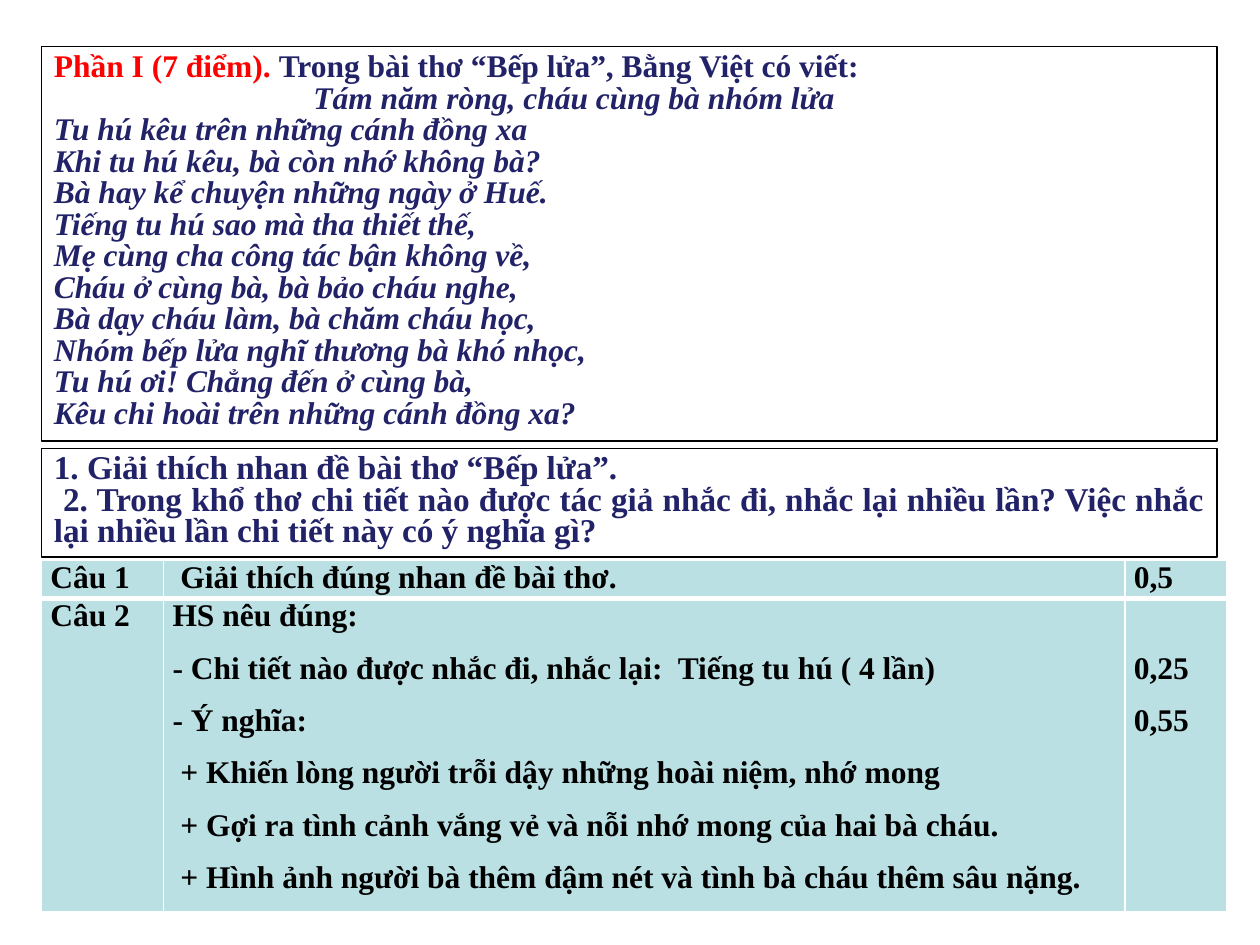
from lxml.etree import SubElement
from pptx import Presentation
from pptx.dml.color import RGBColor
from pptx.enum.text import MSO_AUTO_SIZE as AutoSize, PP_ALIGN as Align
from pptx.oxml.ns import qn
from pptx.util import Inches, Pt

NAVY = RGBColor(0x22, 0x22, 0x68)
RED = RGBColor(0xFF, 0, 0)
BLACK = RGBColor(0, 0, 0)
WHITE = RGBColor(0xFF, 0xFF, 0xFF)
PALE_TEAL = RGBColor(0xBB, 0xE0, 0xE3)

POEM = [
    "Tám năm ròng, cháu cùng bà nhóm lửa",
    "Tu hú kêu trên những cánh đồng xa",
    "Khi tu hú kêu, bà còn nhớ không bà?",
    "Bà hay kể chuyện những ngày ở Huế.",
    "Tiếng tu hú sao mà tha thiết thế,",
    "Mẹ cùng cha công tác bận không về,",
    "Cháu ở cùng bà, bà bảo cháu nghe,",
    "Bà dạy cháu làm, bà chăm cháu học,",
    "Nhóm bếp lửa nghĩ thương bà khó nhọc,",
    "Tu hú ơi! Chẳng đến ở cùng bà,",
    "Kêu chi hoài trên những cánh đồng xa?",
]
QUESTIONS = [
    "1. Giải thích nhan đề bài thơ “Bếp lửa”.",
    " 2. Trong khổ thơ chi tiết nào được tác giả nhắc đi, nhắc lại nhiều lần? "
    "Việc nhắc lại nhiều lần chi tiết này có ý nghĩa gì?",
]
ANSWERS = [
    [["Câu 1"], [" Giải thích đúng nhan đề bài thơ."], ["0,5"]],
    [
        ["Câu 2"],
        [
            "HS nêu đúng:",
            "- Chi tiết nào được nhắc đi, nhắc lại:  Tiếng tu hú ( 4 lần)",
            "- Ý nghĩa:",
            " + Khiến lòng người trỗi dậy những hoài niệm, nhớ mong",
            " + Gợi ra tình cảnh vắng vẻ và nỗi nhớ mong của hai bà cháu.",
            " + Hình ảnh người bà thêm đậm nét và tình bà cháu thêm sâu nặng.",
        ],
        ["0,25", "0,55"],
    ],
]
COLUMN_WIDTHS = [0.97, 7.63, 0.81]
ROW_HEIGHTS = [0.3, 2.49]
SKIPPED_LINE = Inches(0.42)


def apply(target, **values):
    for name, value in values.items():
        setattr(target, name, value)


def add_run(paragraph, text, color, size=18, italic=False):
    run = paragraph.add_run()
    run.text = text
    apply(run.font, name="Times New Roman", size=Pt(size), bold=True, italic=italic)
    run.font.color.rgb = color


def add_paragraph(frame, **values):
    first = frame.paragraphs[0]
    paragraph = frame.add_paragraph() if first.runs else first
    apply(paragraph, **values)
    return paragraph


def add_framed_box(slide, box):
    shape = slide.shapes.add_textbox(*box)
    shape.fill.solid()
    shape.fill.fore_color.rgb = WHITE
    shape.line.color.rgb = BLACK
    shape.line.width = Pt(1)
    apply(shape.text_frame, word_wrap=True, auto_size=AutoSize.SHAPE_TO_FIT_TEXT)
    return shape.text_frame


def add_poem(slide, box):
    frame = add_framed_box(slide, box)
    heading = add_paragraph(frame, alignment=Align.JUSTIFY, line_spacing=Pt(18))
    add_run(heading, "Phần I (7 điểm). ", RED)
    add_run(heading, "Trong bài thơ “Bếp lửa”, Bằng Việt có viết:", NAVY)
    verse = add_paragraph(frame, alignment=Align.LEFT, line_spacing=Pt(18))
    verse._p.get_or_add_pPr().set("indent", str(Inches(2.06)))
    for index, line in enumerate(POEM):
        if index:
            verse.add_line_break()
        add_run(verse, line, NAVY, italic=True)


def add_questions(slide, box):
    frame = add_framed_box(slide, box)
    for question in QUESTIONS:
        paragraph = add_paragraph(frame, alignment=Align.JUSTIFY, line_spacing=Pt(18))
        add_run(paragraph, question, NAVY, size=19)


def set_borders(cell, widths):
    properties = cell._tc.get_or_add_tcPr()
    for position, (side, width) in enumerate(widths.items()):
        line = SubElement(properties, qn(f"a:ln{side}"), w=str(Pt(width)))
        properties.remove(line)
        properties.insert(position, line)
        fill = SubElement(line, qn("a:solidFill"))
        SubElement(fill, qn("a:srgbClr"), val=str(WHITE))


def fill_cell(cell, lines, alignment):
    apply(cell, margin_left=Inches(0.07), margin_right=Inches(0.07),
          margin_top=0, margin_bottom=0)
    cell.fill.solid()
    cell.fill.fore_color.rgb = PALE_TEAL
    for line in lines:
        paragraph = add_paragraph(cell.text_frame, alignment=alignment, space_after=Pt(10))
        add_run(paragraph, line, BLACK)


def add_answers(slide, box):
    table = slide.shapes.add_table(len(ROW_HEIGHTS), len(COLUMN_WIDTHS), *box).table
    apply(table, first_row=False, horz_banding=False)
    for column, width in zip(table.columns, COLUMN_WIDTHS):
        column.width = Inches(width)
    for row, height in zip(table.rows, ROW_HEIGHTS):
        row.height = Inches(height)
    for r, answer in enumerate(ANSWERS):
        for c, lines in enumerate(answer):
            cell = table.cell(r, c)
            fill_cell(cell, lines, Align.LEFT if c == 2 else Align.JUSTIFY)
            set_borders(cell, {"L": 1, "R": 1, "T": 3 if r else 1, "B": 1 if r else 3})
    table.cell(1, 2).margin_top = SKIPPED_LINE


def main():
    presentation = Presentation()
    apply(presentation, slide_width=Inches(10), slide_height=Inches(7.5))
    slide = presentation.slides.add_slide(presentation.slide_layouts[6])
    left = Inches(0.33)
    add_answers(slide, (left, Inches(4.45), Inches(9.41), Inches(2.79)))
    add_questions(slide, (left, Inches(3.56), Inches(9.33), Inches(0.86)))
    add_poem(slide, (left, Inches(0.37), Inches(9.33), Inches(3.13)))
    presentation.save("out.pptx")


if __name__ == "__main__":
    main()
